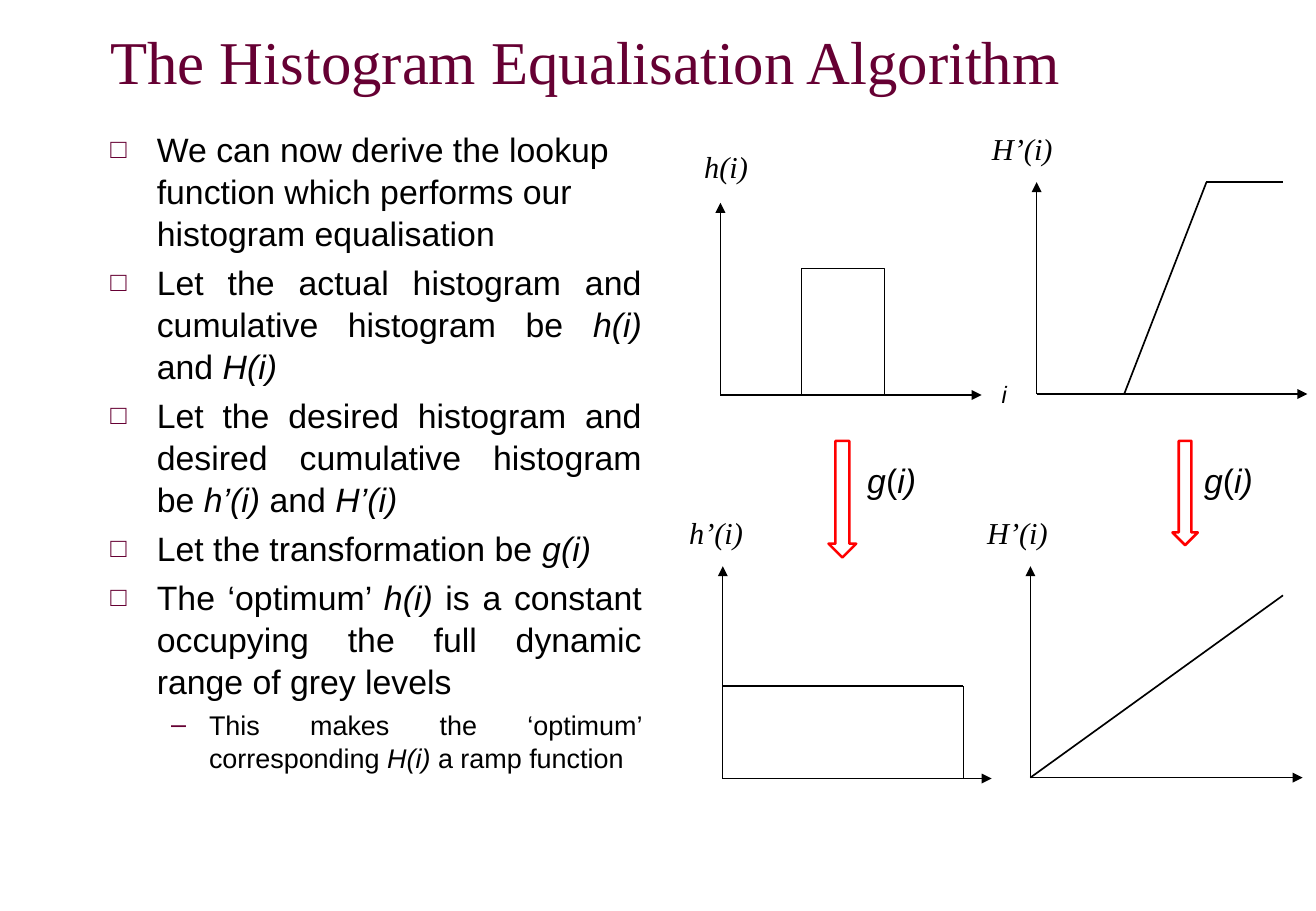
import pptx
import pptx.util
import pptx.dml.color
import pptx.enum.shapes
import pptx.enum.text
import pptx.oxml.ns
import lxml.etree

Cm = pptx.util.Cm
Pt = pptx.util.Pt
RGB = pptx.dml.color.RGBColor
Align = pptx.enum.text.PP_ALIGN
Anchor = pptx.enum.text.MSO_ANCHOR
Shape = pptx.enum.shapes.MSO_SHAPE
qn = pptx.oxml.ns.qn

PLUM = RGB(0x66, 0x00, 0x33)
BLACK = RGB(0, 0, 0)
RED = RGB(0xFF, 0, 0)
SANS = "Arial"
SERIF = "Times New Roman"

LEVELS = (
    {"mark": "□", "size": 20, "left": 0.97, "hang": 0.97, "scale": 80},
    {"mark": "–", "size": 16, "left": 2.06, "hang": 0.79, "scale": 100},
)
POINTS = (
    (0, Align.LEFT, "We can now derive the lookup function which performs our histogram equalisation"),
    (0, Align.JUSTIFY, "Let the actual histogram and cumulative histogram be *h(i)* and *H(i)*"),
    (0, Align.JUSTIFY, "Let the desired histogram and desired cumulative histogram be *h’(i)* and *H’(i)*"),
    (0, Align.JUSTIFY, "Let the transformation be *g(i)*"),
    (0, Align.JUSTIFY, "The ‘optimum’ *h(i)* is a constant occupying the full dynamic range of grey levels"),
    (1, Align.JUSTIFY, "This makes the ‘optimum’ corresponding *H(i)* a ramp function"),
)
# Origin x and y, right end of the level axis, top of the upright axis
AXES = (
    (15.06, 8.26, 20.52, 4.24),
    (21.67, 8.24, 27.33, 3.81),
    (15.11, 16.28, 20.73, 11.84),
    (21.54, 16.26, 27.23, 11.84),
)
CURVES = (
    ((23.5, 8.24), (25.22, 3.81), (26.82, 3.81)),
    ((15.11, 14.35), (20.14, 14.35), (20.14, 16.28)),
    ((21.54, 16.26), (26.82, 12.45)),
)
LABELS = (
    ("*h(i)*", 14.42, 2.97, 1.52, SERIF, 18),
    ("*H’(i)*", 20.39, 2.59, 1.96, SERIF, 18),
    ("*h’(i)*", 13.99, 10.62, 1.96, SERIF, 18),
    ("*H’(i)*", 20.29, 10.62, 1.96, SERIF, 18),
    ("*i*", 20.65, 7.82, 0.69, SANS, 14),
    ("*g*(*i)*", 17.65, 9.5, 1.98, SANS, 20),
    ("*g*(*i)*", 24.69, 9.5, 1.98, SANS, 20),
)
ARROWS = ((17.32, 0.58, 2.44), (24.51, 0.53, 2.18))


def assign(item, style):
    for name, value in style.items():
        setattr(item, name, value)


class Deck:
    def __init__(self):
        self.show = pptx.Presentation()
        assign(self.show, {"slide_width": Cm(27.51), "slide_height": Cm(19.05)})
        self.slide = self.show.slides.add_slide(self.show.slide_layouts[6])

    def frame(self, left, top, width, height, **style):
        box = self.slide.shapes.add_textbox(Cm(left), Cm(top), Cm(width), Cm(height))
        assign(box.text_frame, {"word_wrap": True, **style})
        return box.text_frame

    def words(self, para, text, face, size, color=BLACK):
        """Add runs to a paragraph; stars enclose italic parts."""
        for index, part in enumerate(text.split("*")):
            if part:
                run = para.add_run()
                run.text = part
                assign(run.font, {"name": face, "size": Pt(size), "italic": index % 2 == 1})
                run.font.color.rgb = color

    def bullet(self, para, mark, left, hang, scale):
        props = para._p.get_or_add_pPr()
        props.set("marL", str(Cm(left)))
        props.set("indent", str(-Cm(hang)))
        tint = lxml.etree.SubElement(props, qn("a:buClr"))
        lxml.etree.SubElement(tint, qn("a:srgbClr"), val=str(PLUM))
        lxml.etree.SubElement(props, qn("a:buSzPct"), val=str(scale * 1000))
        lxml.etree.SubElement(props, qn("a:buFont"), typeface=SANS)
        lxml.etree.SubElement(props, qn("a:buChar"), char=mark)

    def title(self, text):
        frame = self.frame(2.06, 0, 23.39, 2.54, vertical_anchor=Anchor.MIDDLE)
        self.words(frame.paragraphs[0], text, SERIF, 36, PLUM)

    def body(self, points):
        frame = self.frame(2.06, 2.54, 11.61, 14.4)
        for index, (level, align, text) in enumerate(points):
            para = frame.add_paragraph() if index else frame.paragraphs[0]
            look = dict(LEVELS[level])
            size = look.pop("size")
            before = Pt(size * 0.2) if index else Pt(0)
            assign(para, {"level": level, "alignment": align,
                          "line_spacing": 1.04, "space_before": before})
            self.bullet(para, **look)
            self.words(para, text, SANS, size)

    def label(self, text, left, top, width, face, size):
        frame = self.frame(left, top, width, 1.07, word_wrap=False)
        frame.paragraphs[0].alignment = Align.CENTER
        self.words(frame.paragraphs[0], text, face, size)

    def line(self, start, end, weight=1, arrow=False):
        ends = [Cm(value) for value in (*start, *end)]
        kind = pptx.enum.shapes.MSO_CONNECTOR.STRAIGHT
        link = self.slide.shapes.add_connector(kind, *ends)
        link.line.color.rgb = BLACK
        link.line.width = Pt(weight)
        props = link._element.spPr
        if arrow:
            lxml.etree.SubElement(props.find(qn("a:ln")), qn("a:tailEnd"), type="triangle")
        lxml.etree.SubElement(props, qn("a:effectLst"))

    def axes(self, left, base, right, top):
        for end in ((right, base), (left, top)):
            self.line((left, base), end, 0.75, True)

    def curve(self, points):
        for start, end in zip(points, points[1:]):
            self.line(start, end)

    def shape(self, kind, left, top, width, height, color, weight):
        item = self.slide.shapes.add_shape(kind, Cm(left), Cm(top), Cm(width), Cm(height))
        item.shadow.inherit = False
        item.fill.background()
        item.line.color.rgb = color
        item.line.width = Pt(weight)


def main():
    deck = Deck()
    deck.title("The Histogram Equalisation Algorithm")
    deck.body(POINTS)
    for axes in AXES:
        deck.axes(*axes)
    for curve in CURVES:
        deck.curve(curve)
    deck.shape(Shape.RECTANGLE, 16.76, 5.61, 1.73, 2.64, BLACK, 0.75)
    for left, width, height in ARROWS:
        deck.shape(Shape.DOWN_ARROW, left, 9.22, width, height, RED, 1.5)
    for label in LABELS:
        deck.label(*label)
    deck.show.save("out.pptx")


if __name__ == "__main__":
    main()
